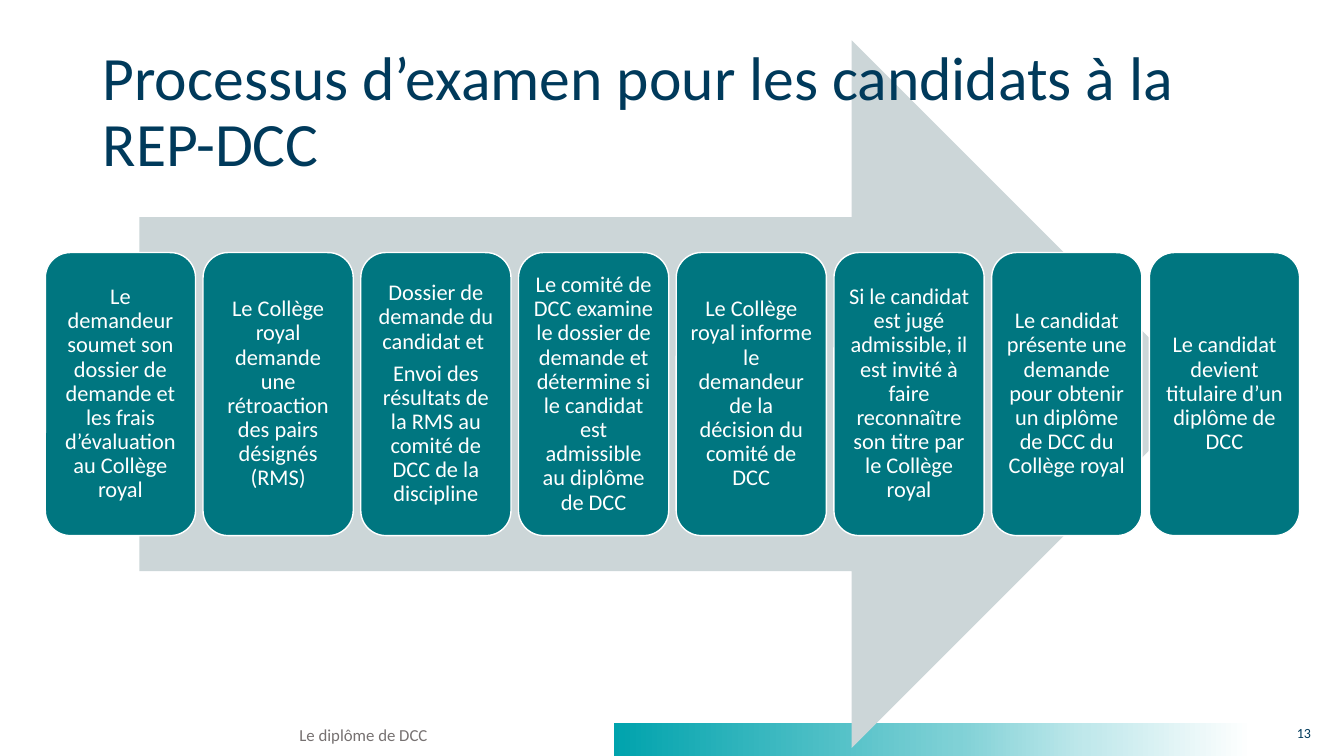
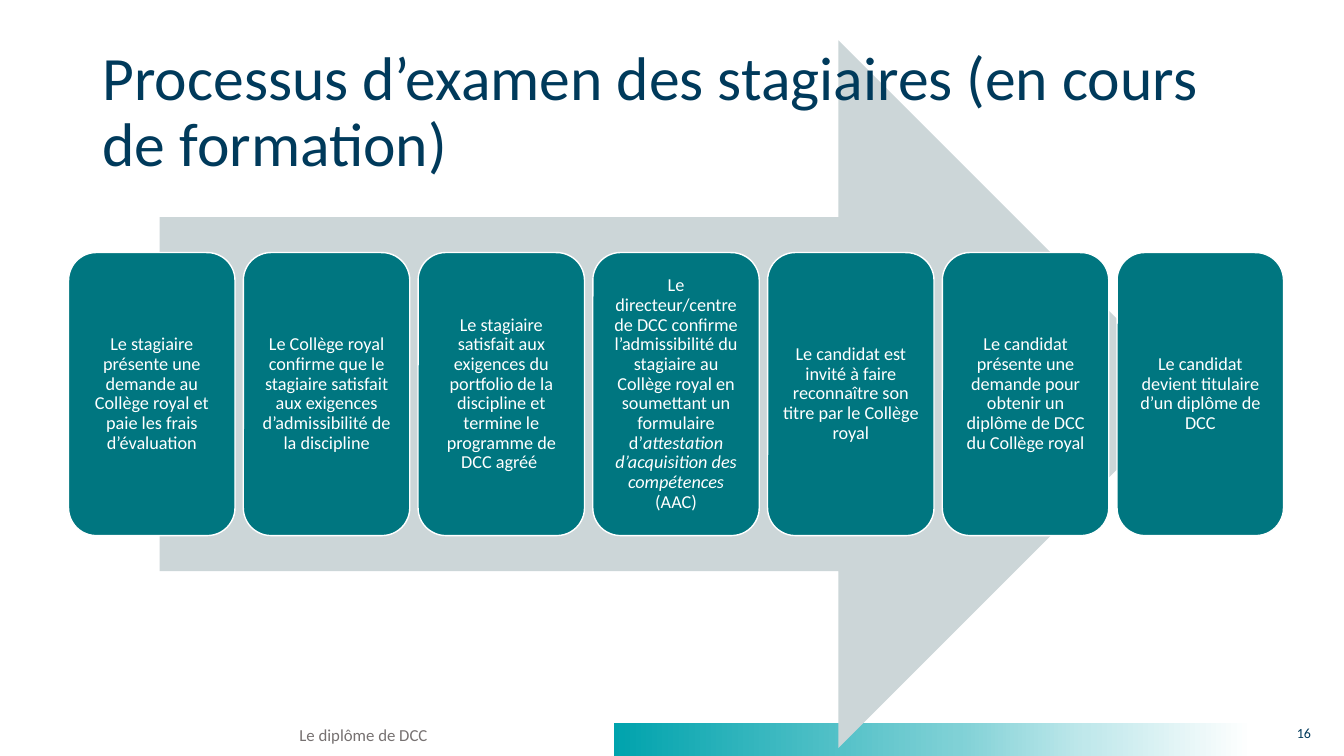
from copy import deepcopy

from pptx import Presentation
from pptx.dml.color import RGBColor as Rgb
from pptx.enum.shapes import MSO_SHAPE as Kind
from pptx.enum.text import MSO_ANCHOR as Anchor, PP_ALIGN as Align
from pptx.oxml.ns import qn
from pptx.util import Pt

PX = 9144
FONT = "Calibri"
NAVY = Rgb(0x00, 0x3A, 0x5B)
TEAL = Rgb(0x00, 0x76, 0x80)
GREY = Rgb(0x76, 0x71, 0x71)
SILVER = Rgb(0xCC, 0xD6, 0xD8)
WHITE = Rgb(0xFF, 0xFF, 0xFF)
FADE = [
    (0, Rgb(0x00, 0xA3, 0xAD)),
    (0.54, Rgb(0x80, 0xD1, 0xD6)),
    (0.74, Rgb(0xC0, 0xE8, 0xEB)),
    (1, WHITE),
]

FOOTER = "Le diplôme de DCC "
SLIDES = [
    dict(
        title="Processus d’examen pour les candidats à la REP-DCC",
        number=13, wide=1182, box=(45, 40, 1244, 702), size=16, inset=7,
        steps=[
            "Le demandeur soumet son dossier de demande et les frais d’évaluation au Collège royal",
            "Le Collège royal demande une rétroaction des pairs désignés (RMS)",
            "Dossier de demande du candidat et \n"
            "Envoi des résultats de la RMS au comité de DCC de la discipline",
            "Le comité de DCC examine le dossier de demande et détermine si le candidat "
            "est admissible au diplôme de DCC",
            "Le Collège royal informe le demandeur de la décision du comité de DCC",
            "Si le candidat est jugé admissible, il est invité à faire reconnaître son titre "
            "par le Collège royal",
            "Le candidat présente une demande pour obtenir un diplôme de DCC du Collège royal",
            "Le candidat devient titulaire d’un diplôme de DCC",
        ],
    ),
    dict(
        title="Processus d’examen des stagiaires (en cours de formation)",
        number=16, wide=1150, box=(68, 40, 1205, 702), size=13, inset=5,
        steps=[
            "Le stagiaire présente une demande au Collège royal et paie les frais d’évaluation",
            "Le Collège royal confirme que le stagiaire satisfait aux exigences "
            "d’admissibilité de la discipline",
            "Le stagiaire satisfait aux exigences du portfolio de la discipline et termine "
            "le programme de DCC agréé ",
            "Le directeur/centre de DCC confirme l’admissibilité du stagiaire au Collège royal "
            "en soumettant un formulaire d’*attestation d’acquisition des compétences* (AAC)",
            "Le candidat est invité à faire reconnaître son titre par le Collège royal",
            "Le candidat présente une demande pour obtenir un diplôme de DCC du Collège royal",
            "Le candidat devient titulaire d’un diplôme de DCC",
        ],
    ),
]


def scale(box):
    return [round(side * PX) for side in box]


def write(shape, text, size, color, align=Align.LEFT, anchor=Anchor.TOP,
          inset=None, line=None, after=0):
    frame = shape.text_frame
    frame.word_wrap = True
    frame.vertical_anchor = anchor
    if inset is not None:
        frame.margin_left = frame.margin_right = inset * PX
        frame.margin_top = frame.margin_bottom = inset * PX
    for row, words in enumerate(text.split("\n")):
        para = frame.add_paragraph() if row else frame.paragraphs[0]
        para.alignment = align
        para.line_spacing = line
        para.space_after = Pt(after)
        for part, piece in enumerate(words.split("*")):
            run = para.add_run()
            run.text = piece
            run.font.name = FONT
            run.font.size = Pt(size)
            run.font.color.rgb = color
            run.font.italic = part % 2 == 1


def label(slide, box, text, **form):
    write(slide.shapes.add_textbox(*scale(box)), text, **form)


def block(slide, kind, box, fill=None, edge=None):
    shape = slide.shapes.add_shape(kind, *scale(box))
    shape.shadow.inherit = False
    if fill is not None:
        shape.fill.solid()
        shape.fill.fore_color.rgb = fill
    if edge is None:
        shape.line.fill.background()
    else:
        shape.line.color.rgb = edge
        shape.line.width = Pt(1)
    return shape


def band(slide, box):
    left, top, width, height = box
    bar = block(slide, Kind.RECTANGLE, (left + 468, top + 3, 633, height - 2))
    bar.fill.gradient()
    bar.fill.gradient_angle = 0
    stops = bar.fill._xPr.find(qn("a:gradFill")).find(qn("a:gsLst"))
    while len(stops) < len(FADE):
        stops.append(deepcopy(stops[0]))
    for stop, (place, color) in zip(bar.fill.gradient_stops, FADE):
        stop.position = place
        stop.color.rgb = color


def footer(slide, box, number):
    left, top, width, height = box
    band(slide, box)
    label(slide, (left, top, 443, height), FOOTER,
          size=12, color=GREY, align=Align.CENTER)
    label(slide, (left + width - 68, top, 68, height), str(number),
          size=10, color=NAVY, align=Align.RIGHT)


def process(slide, box, steps, size, inset):
    left, top, width, height = box
    block(slide, Kind.RIGHT_ARROW,
          (left + width * 0.075, top, width * 0.85, height), SILVER)
    count = len(steps)
    card = width / (count + (count - 1) * 0.05)
    for col, step in enumerate(steps):
        place = (left + col * card * 1.05, top + height * 0.3, card, height * 0.4)
        shape = block(slide, Kind.ROUNDED_RECTANGLE, place, TEAL, WHITE)
        write(shape, step, size=size, color=WHITE, align=Align.CENTER,
              anchor=Anchor.MIDDLE, inset=inset, line=0.9, after=size * 0.35)


def build(deck, title, number, wide, box, size, inset, steps):
    slide = deck.slides.add_slide(deck.slide_layouts[6])
    footer(slide, (141, 714, 1169, 35), number)
    process(slide, box, steps, size, inset)
    label(slide, (92, 40, wide, 145), title,
          size=44, color=NAVY, anchor=Anchor.MIDDLE, line=0.9)


def main():
    deck = Presentation()
    deck.slide_width, deck.slide_height = scale((1333, 750))
    for page in SLIDES:
        build(deck, **page)
    deck.save("out.pptx")


if __name__ == "__main__":
    main()
